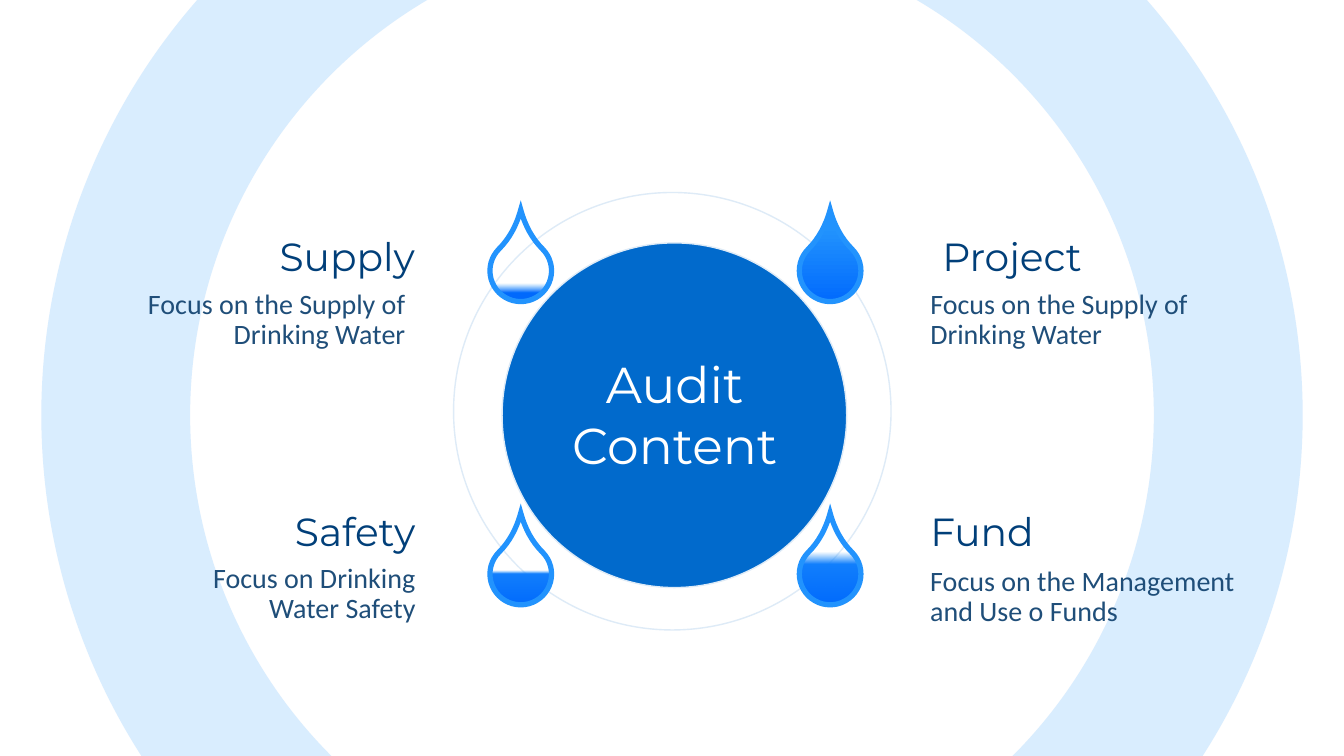
import pptx
import pptx.util
import pptx.dml.color
import pptx.enum.shapes
import pptx.enum.text
import pptx.oxml

Pt = pptx.util.Pt
RGB = pptx.dml.color.RGBColor.from_string
SHAPE = pptx.enum.shapes.MSO_SHAPE
ALIGN = pptx.enum.text.PP_ALIGN
NAMESPACE = 'xmlns:a="http://schemas.openxmlformats.org/drawingml/2006/main"'

THEME = {
    "halo": "C5E3FE",
    "ring_line": "DEEBF7",
    "hub": "016ACC",
    "drop_line": "2293FD",
    "heading": {"color": "013F79", "font": {"name": "Montserrat", "size": Pt(28)}},
    "detail": {"color": "1F4E79", "font": {"name": "Calibri", "size": Pt(20)}, "spacing": 0.9},
    "center": {"color": "FFFFFF", "font": {"name": "Montserrat", "size": Pt(36)}},
}
FRAME = {"word_wrap": True, "auto_size": pptx.enum.text.MSO_AUTO_SIZE.SHAPE_TO_FIT_TEXT}

deck = pptx.Presentation()
deck.slide_width, deck.slide_height = Pt(960), Pt(540)
page = deck.slides.add_slide(deck.slide_layouts[6])


def add_shape(kind, left, top, size, fill=None, line=None, width=1):
    """Add a square-bounded shape; no fill or line unless a colour is given."""
    shape = page.shapes.add_shape(kind, Pt(left), Pt(top), Pt(size), Pt(size))
    shape.shadow.inherit = False
    if fill:
        shape.fill.solid()
        shape.fill.fore_color.rgb = RGB(fill)
    else:
        shape.fill.background()
    if line:
        shape.line.color.rgb = RGB(line)
        shape.line.width = Pt(width)
    else:
        shape.line.fill.background()
    return shape


def add_text(text, left, top, width, height, style, align):
    box = page.shapes.add_textbox(Pt(left), Pt(top), Pt(width), Pt(height))
    for name, value in FRAME.items():
        setattr(box.text_frame, name, value)
    para = box.text_frame.paragraphs[0]
    para.alignment = align
    if "spacing" in style:
        para.line_spacing = style["spacing"]
    span = para.add_run()
    span.text = text
    for name, value in style["font"].items():
        setattr(span.font, name, value)
    span.font.color.rgb = RGB(style["color"])


# Background halo and thin ring
halo = add_shape(SHAPE.DONUT, 29.5, -154, 901, THEME["halo"])
halo.adjustments[0] = 0.118
halo_color = halo.fill._xPr.find(".//{*}srgbClr")
halo_color.append(pptx.oxml.parse_xml(f'<a:alpha {NAMESPACE} val="64000"/>'))
add_shape(SHAPE.OVAL, 324, 137.5, 312.5, line=THEME["ring_line"])

# Headings and details: text, left, top, width, alignment
headings = [
    ("Supply", 160, 162.7, 143.5, ALIGN.RIGHT),
    ("Project", 657.4, 162.7, 131, ALIGN.CENTER),
    ("Safety", 172.8, 358.6, 131, ALIGN.RIGHT),
    ("Fund", 657.4, 358.6, 131, ALIGN.LEFT),
]
details = [
    ("Focus on the Supply of Drinking Water", 87.1, 203.8, 209.5, ALIGN.RIGHT),
    ("Focus on the Supply of Drinking Water", 657.4, 203.8, 209.5, ALIGN.LEFT),
    ("Focus on Drinking Water Safety", 94.3, 399.6, 209.5, ALIGN.RIGHT),
    ("Focus on the Management and Use o Funds", 657.4, 401.8, 235.4, ALIGN.LEFT),
]
for rows, height, style in ((headings, 41, THEME["heading"]), (details, 51, THEME["detail"])):
    for text, left, top, width, align in rows:
        add_text(text, left, top, width, height, style, align)

# Water drops: left, top, gradient stops (position %, colour, opacity %)
drops = [
    (571, 171.4, [(0, "2293FD", 100), (87, "016AFD", 100)]),
    (571, 388, [(0, "C5E3FE", 0), (25, "2293FD", 0), (39, "127FFD", 100), (87, "016AFD", 100)]),
    (350, 388, [(0, "C5E3FE", 0), (46, "2293FD", 0), (50, "127FFD", 100), (87, "016AFD", 100)]),
    (350, 171.4, [(0, "C5E3FE", 0), (64, "2293FD", 0), (75, "016AFD", 100)]),
]
for left, top, stops in drops:
    drop = add_shape(SHAPE.TEAR, left, top, 44, line=THEME["drop_line"], width=3.75)
    drop.adjustments[0] = 1.401
    drop.rotation = 315
    drop.fill.gradient()
    stop_list = drop.fill._xPr.find("{*}gradFill/{*}gsLst")
    for old_stop in list(stop_list):
        stop_list.remove(old_stop)
    for position, color, opacity in stops:
        stop_list.append(pptx.oxml.parse_xml(
            f'<a:gs {NAMESPACE} pos="{position * 1000}"><a:srgbClr val="{color}">'
            f'<a:alpha val="{opacity * 1000}"/></a:srgbClr></a:gs>'))
    drop.fill.gradient_angle = 225  # counter-clockwise; points down once the drop is turned
    outline = drop.line._get_or_add_ln()
    outline.append(pptx.oxml.parse_xml(f'<a:miter {NAMESPACE} lim="800000"/>'))

# Central hub
add_shape(SHAPE.OVAL, 358.6, 173.5, 246.2, THEME["hub"], THEME["ring_line"])
add_text("Audit Content", 357, 249, 250, 94, THEME["center"], ALIGN.CENTER)

deck.save("out.pptx")
